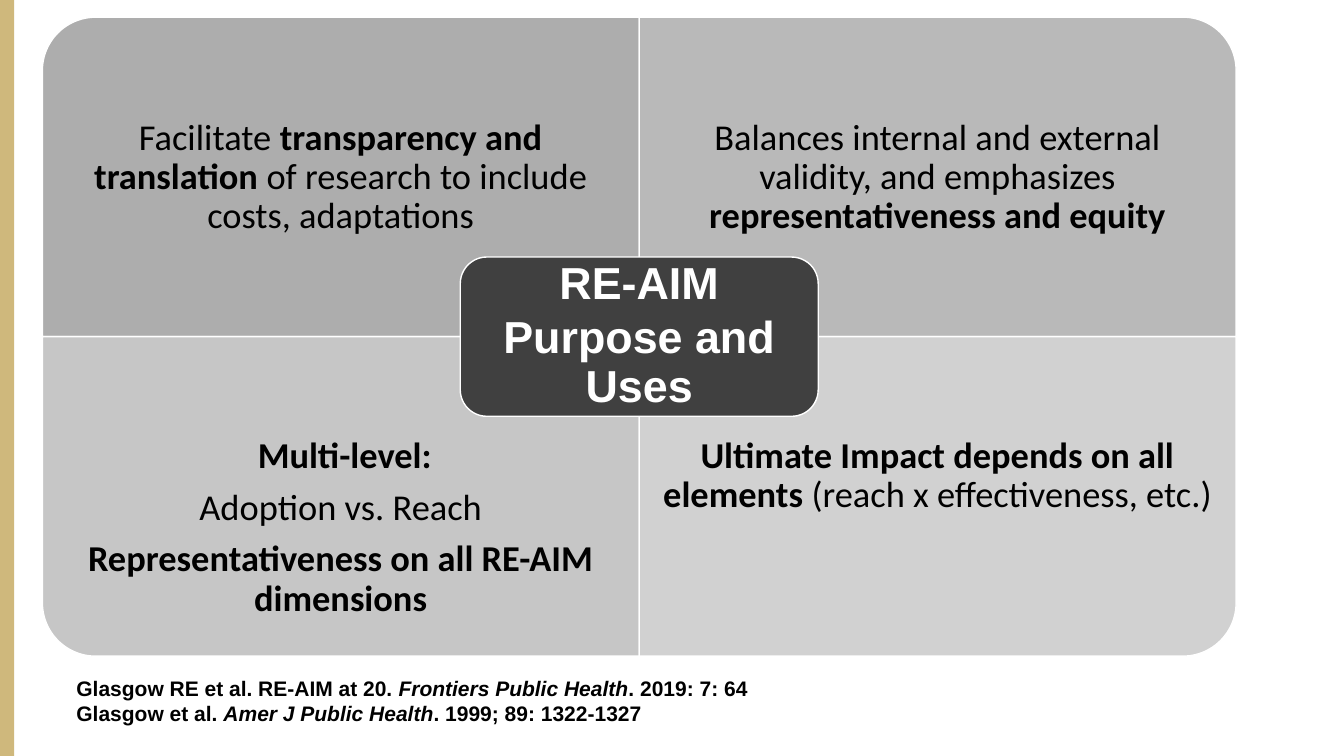
from pptx import Presentation
from pptx.dml.color import RGBColor
from pptx.enum import shapes, text
from pptx.oxml.ns import qn
from pptx.util import Inches, Pt
from lxml import etree

# Each paragraph is a list of (words, style): b bold, i italic
# Quadrants in reading order: rotation, opacity in percent, paragraphs
QUADS = [
    (270, 90, [[("Facilitate ", ""), ("transparency and translation ", "b"),
                ("of research to include costs, adaptations", "")]]),
    (0, 77, [[("Balances internal and external validity, and emphasizes", ""),
              (" representativeness and equity", "b")]]),
    (180, 63, [[(" Multi-level:", "b")],
               [("Adoption vs. Reach", "")],
               [("Representativeness on all RE-AIM dimensions", "b")]]),
    (90, 50, [[("Ultimate Impact depends on all elements ", "b"),
               ("(reach x effectiveness, etc.)", "")]]),
]
HUB = [[("RE-AIM", "b")], [("Purpose and Uses", "b")]]
REFS = [
    [("Glasgow RE et al. RE-AIM at 20. ", "b"),
     ("Frontiers Public Health", "bi"), (". 2019: 7: 64", "b")],
    [("Glasgow et al. ", "b"),
     ("Amer J Public Health", "bi"), (". 1999; 89: 1322-1327", "b")],
]
THEME = {
    "quad": "A5A5A5", "hub": "404040", "bar": "CFB87C",
    "white": "FFFFFF", "black": "000000",
    "body": ("Calibri", 26), "title": ("Arial", 32), "ref": ("Arial", 15),
}
LEFT, TOP, WIDE, HIGH = 0.42, 0.17, 5.92, 3.17
HUB_W, HUB_H = 3.55, 1.58

deck = Presentation()
deck.slide_width, deck.slide_height = Inches(13.33), Inches(7.5)
slide = deck.slides.add_slide(deck.slide_layouts[6])
KIND = shapes.MSO_SHAPE
ANCHOR = text.MSO_ANCHOR


def tint(name):
    return RGBColor.from_string(THEME[name])


def block(kind, box, fill, edge=True):
    """Add a filled shape, with a thin white edge if wanted."""
    shape = slide.shapes.add_shape(kind, *map(Inches, box))
    shape.shadow.inherit = False
    shape.fill.solid()
    shape.fill.fore_color.rgb = tint(fill)
    if edge:
        shape.line.color.rgb = tint("white")
        shape.line.width = Pt(1)
    else:
        shape.line.fill.background()
    return shape


def fade(shape, percent):
    """Set the opacity of a solid fill."""
    color = shape.fill._xPr.find(qn("a:solidFill"))[0]
    etree.SubElement(color, qn("a:alpha")).set("val", str(percent * 1000))


def write(shape, paras, role, color, anchor, pad=None):
    """Fill a shape with styled runs; pad means centred, spaced text."""
    frame = shape.text_frame
    frame.word_wrap = True
    frame.vertical_anchor = anchor
    font, size = THEME[role]
    if pad:
        frame.margin_left = frame.margin_right = Inches(pad)
        frame.margin_top = frame.margin_bottom = Inches(pad)
    for n, runs in enumerate(paras):
        para = frame.add_paragraph() if n else frame.paragraphs[0]
        if pad:
            para.alignment = text.PP_ALIGN.CENTER
            para.line_spacing = 0.9
            para.space_after = Pt(round(size * 0.35))
        for words, style in runs:
            run = para.add_run()
            run.text = words
            run.font.name, run.font.size = font, Pt(size)
            run.font.bold, run.font.italic = "b" in style, "i" in style
            run.font.color.rgb = tint(color)


def textbox(box):
    return slide.shapes.add_textbox(*map(Inches, box))


refs = textbox((0.66, 6.65, 8.33, 0.61))
write(refs, REFS, "ref", "black", ANCHOR.TOP)

for n, (turn, solid, paras) in enumerate(QUADS):
    row, col = divmod(n, 2)
    x, y = LEFT + col * WIDE, TOP + row * HIGH
    w, h = (HIGH, WIDE) if turn % 180 else (WIDE, HIGH)
    place = (x + (WIDE - w) / 2, y + (HIGH - h) / 2, w, h)
    quad = block(KIND.ROUND_1_RECTANGLE, place, "quad")
    quad.rotation = turn
    fade(quad, solid)
    # Text keeps to the outer three quarters, clear of the hub
    label = textbox((x, y + row * HIGH / 4, WIDE, HIGH * 0.75))
    write(label, paras, "body", "black",
          ANCHOR.TOP if row else ANCHOR.BOTTOM, 0.2)

hub = block(KIND.ROUNDED_RECTANGLE,
            (LEFT + WIDE - HUB_W / 2, TOP + HIGH - HUB_H / 2, HUB_W, HUB_H),
            "hub")
write(hub, HUB, "title", "white", ANCHOR.MIDDLE, 0.13)
hub.text_frame.paragraphs[0].space_after = Pt(4)

block(KIND.RECTANGLE, (0, 0, 0.14, 7.5), "bar", edge=False)

deck.save("out.pptx")
